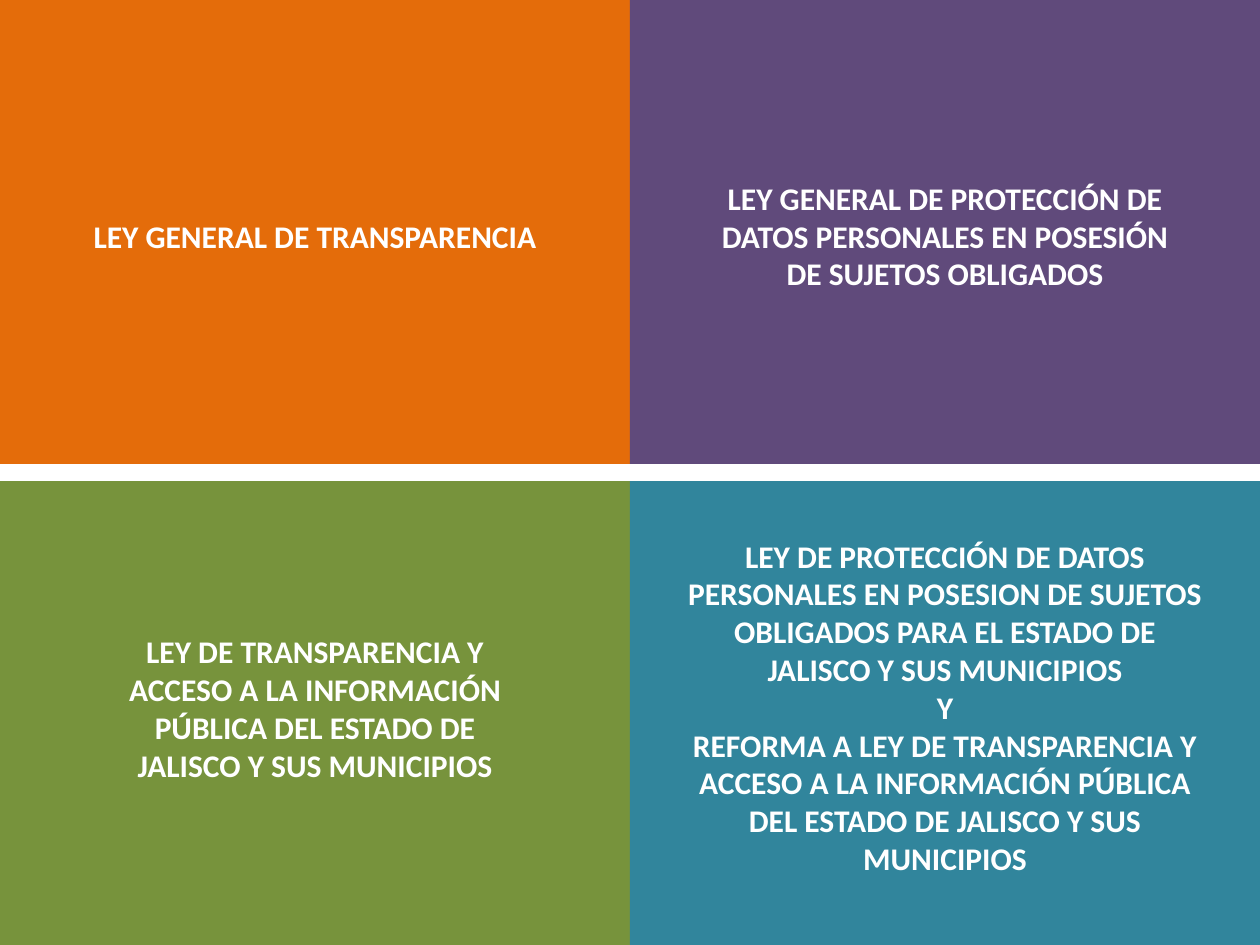
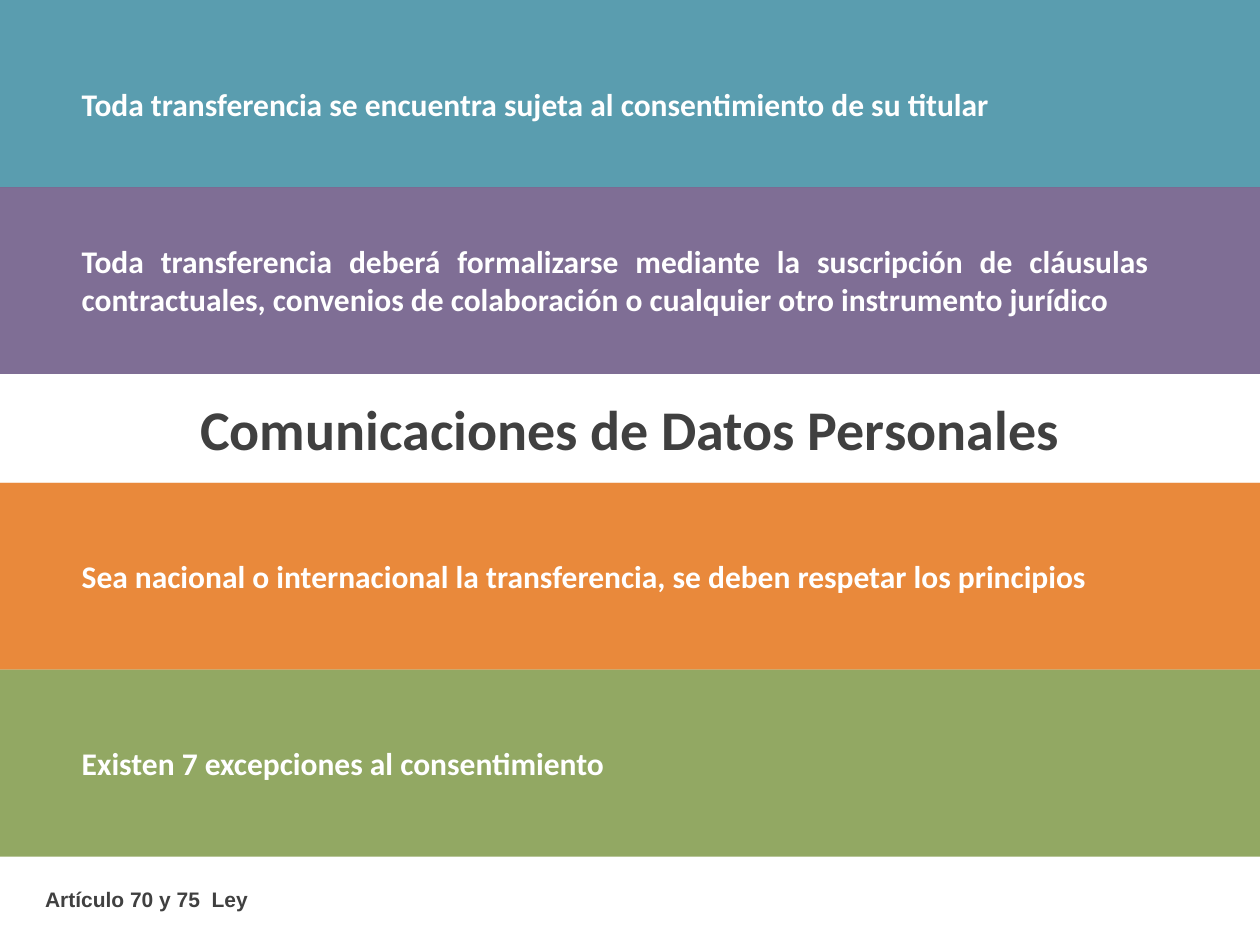
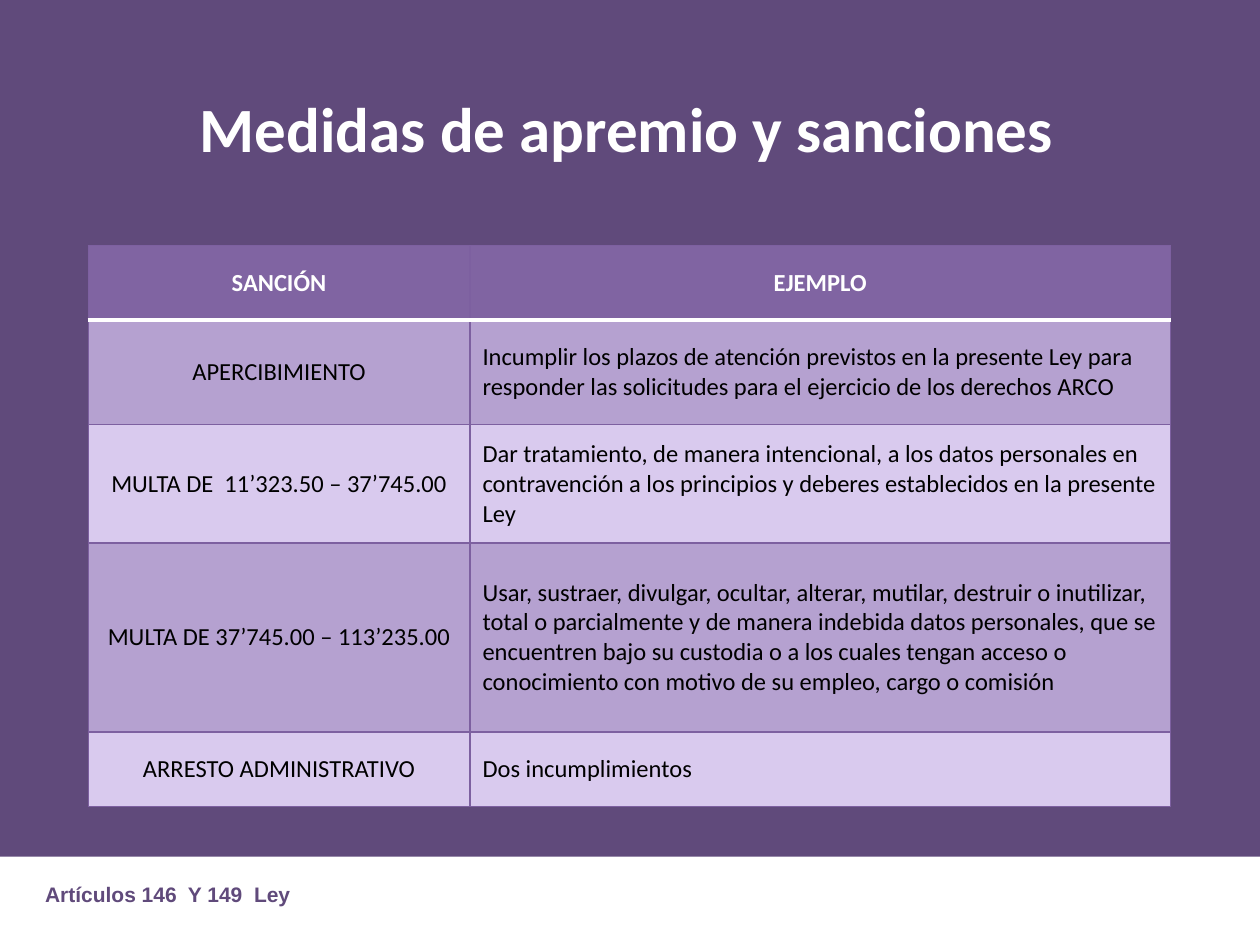
from collections import namedtuple

from lxml import etree
from pptx import Presentation, util as u
from pptx.dml.color import RGBColor
from pptx.enum import shapes, text
from pptx.oxml.ns import qn

COLS, ROWS = 10, 7.5  # the grid that all lengths are counted in
CELL = u.Inches(1)
FOOTER_TOP = 6.8
COLORS = {
    "white": "FFFFFF", "black": "000000", "gray": "404040",
    "purple": "604A7B", "teal": "31859C", "green": "77933C", "orange": "E46C0A",
    "header": "8064A2", "odd_row": "B5A1D0", "even_row": "D9CAEE", "grid": "7D60A0",
}
ALIGN = {"left": text.PP_ALIGN.LEFT, "center": text.PP_ALIGN.CENTER,
         "justify": text.PP_ALIGN.JUSTIFY}


class Box(namedtuple("Box", "left top width height")):
    def inner(self, left, top, width, height):
        """Box whose left and top are counted from this one."""
        return Box(self.left + left, self.top + top, width, height)

    def centered(self, width, height):
        return self.inner((self.width - width) / 2, (self.height - height) / 2, width, height)

    def emu(self):
        return [round(length * CELL) for length in self]


SLIDE = Box(0, 0, COLS, ROWS)
FOOTER = SLIDE.inner(0, FOOTER_TOP, COLS, ROWS - FOOTER_TOP)


def rgb(color):
    return RGBColor.from_string(COLORS[color])


def write(frame, content, size=18, color="white", bold=True, font="Calibri", align="center"):
    """Fill a text frame, one paragraph per line of content."""
    for number, line in enumerate(content.split("\n")):
        paragraph = frame.add_paragraph() if number else frame.paragraphs[0]
        paragraph.alignment = ALIGN[align]
        run = paragraph.add_run()
        run.text = line
        run.font.size, run.font.bold, run.font.name = u.Pt(size), bold, font
        run.font.color.rgb = rgb(color)


def add_label(slide, box, content, wrap=True, grow=True, **style):
    frame = slide.shapes.add_textbox(*box.emu()).text_frame
    frame.word_wrap = wrap
    frame.vertical_anchor = text.MSO_ANCHOR.TOP if grow else text.MSO_ANCHOR.MIDDLE
    if grow:
        frame.auto_size = text.MSO_AUTO_SIZE.SHAPE_TO_FIT_TEXT
    write(frame, content, **style)


def add_panel(slide, box, color, opacity=100):
    panel = slide.shapes.add_shape(shapes.MSO_SHAPE.RECTANGLE, *box.emu())
    panel.shadow.inherit = False
    panel.line.fill.background()
    panel.fill.solid()
    panel.fill.fore_color.rgb = rgb(color)
    if opacity < 100:
        tint = panel.fill._xPr.find(".//" + qn("a:srgbClr"))
        etree.SubElement(tint, qn("a:alpha"), val=str(opacity * 1000))
    return panel


def add_footer(slide, article, drop, width, color):
    add_label(slide, FOOTER.inner(0.26, drop, width, 0.3), article, wrap=False,
              size=12, font="Arial", color=color, align="left")


def add_divider(slide, box, color, weight):
    middle = box.top + box.height / 2
    ends = Box(box.left, middle, box.left + box.width, middle).emu()
    divider = slide.shapes.add_connector(shapes.MSO_CONNECTOR.STRAIGHT, *ends)
    divider.line.color.rgb = rgb(color)
    divider.line.width = u.Pt(weight)
    etree.SubElement(divider._element.spPr, qn("a:effectLst"))


def add_border(cell, side, color, weight):
    line = etree.SubElement(cell._tc.get_or_add_tcPr(), qn("a:ln" + side),
                            w=str(u.Pt(weight)))
    fill = etree.SubElement(line, qn("a:solidFill"))
    etree.SubElement(fill, qn("a:srgbClr"), val=COLORS[color])


def add_sanctions(slide, box, rows, widths, heights):
    table = slide.shapes.add_table(len(rows), len(widths), *box.emu()).table
    for column, width in zip(table.columns, widths):
        column.width = round(width * CELL)
    for r, (entries, height) in enumerate(zip(rows, heights)):
        table.rows[r].height = round(height * CELL)
        header = r == 0
        fill = "header" if header else "odd_row" if r % 2 else "even_row"
        under_header = {"T": r == 1, "B": header}
        for c, entry in enumerate(entries):
            cell = table.cell(r, c)
            cell.vertical_anchor = text.MSO_ANCHOR.MIDDLE
            for side in "LRTB":
                border = ("white", 2) if under_header.get(side) else ("grid", 0.75)
                add_border(cell, side, *border)
            cell.fill.solid()
            cell.fill.fore_color.rgb = rgb(fill)
            write(cell.text_frame, entry, size=14, bold=header,
                  color="white" if header else "black",
                  align="center" if header or c == 0 else "left")


def laws_slide(slide, box):
    laws = [  # color, text width, text height, law
        ("orange", 3.75, 0.4, "LEY GENERAL DE TRANSPARENCIA"),
        ("purple", 3.85, 1.01,
         "LEY GENERAL DE PROTECCIÓN DE DATOS PERSONALES EN POSESIÓN DE SUJETOS OBLIGADOS"),
        ("green", 3.59, 1.31,
         "LEY DE TRANSPARENCIA Y ACCESO A LA INFORMACIÓN PÚBLICA DEL ESTADO DE JALISCO "
         "Y SUS MUNICIPIOS"),
        ("teal", 4.3, 2.83,
         "LEY DE PROTECCIÓN DE DATOS PERSONALES EN POSESION DE SUJETOS OBLIGADOS PARA EL "
         "ESTADO DE JALISCO Y SUS MUNICIPIOS\nY\nREFORMA A LEY DE TRANSPARENCIA Y ACCESO A LA "
         "INFORMACIÓN PÚBLICA DEL ESTADO DE JALISCO Y SUS MUNICIPIOS"),
    ]
    width, height = box.width / 2, box.height / 2
    for number, (color, label_width, label_height, law) in enumerate(laws):
        row, column = divmod(number, 2)
        quadrant = box.inner(column * width, row * height, width, height)
        add_panel(slide, quadrant, color)
        add_label(slide, quadrant.centered(label_width, label_height), law)
    add_divider(slide, box, "white", 10)


def transfers_slide(slide, box):
    rules = [  # color, text width, text height, drop from the band's middle, rule
        ("teal", 8.08, 0.4, 0.08,
         "Toda transferencia se encuentra sujeta al consentimiento de su titular"),
        ("purple", 8.67, 0.71, 0,
         "Toda transferencia deberá formalizarse mediante la suscripción de cláusulas "
         "contractuales, convenios de colaboración o cualquier otro instrumento jurídico"),
        ("orange", 9.06, 0.4, 0,
         "Sea nacional o internacional la transferencia, se deben respetar los principios"),
        ("green", 7.42, 0.4, 0, "Existen 7 excepciones al consentimiento"),
    ]
    title_height = 0.86
    band_height = (FOOTER_TOP - title_height) / len(rules)
    for number, (color, width, height, drop, rule) in enumerate(rules):
        top = number * band_height + (title_height if number >= 2 else 0)
        band = box.inner(0, top, box.width, band_height)
        add_panel(slide, band, color, opacity=80)
        add_label(slide, band.inner(0.55, (band_height - height) / 2 + drop, width, height),
                  rule, align="justify")
    add_footer(slide, "Artículo 70 y 75  Ley", 0.19, 1.83, "gray")
    title = add_panel(slide, box.inner(0, 2 * band_height, box.width, title_height), "white")
    title.text_frame.vertical_anchor = text.MSO_ANCHOR.MIDDLE
    write(title.text_frame, "Comunicaciones de Datos Personales", size=32, color="gray")


def sanctions_slide(slide, box):
    rows = [
        ("SANCIÓN", "EJEMPLO"),
        ("APERCIBIMIENTO",
         "Incumplir los plazos de atención previstos en la presente Ley para responder las "
         "solicitudes para el ejercicio de los derechos ARCO"),
        ("MULTA DE  11’323.50 – 37’745.00",
         "Dar tratamiento, de manera intencional, a los datos personales en contravención a "
         "los principios y deberes establecidos en la presente Ley"),
        ("MULTA DE 37’745.00 – 113’235.00",
         "Usar, sustraer, divulgar, ocultar, alterar, mutilar, destruir o inutilizar, total o "
         "parcialmente y de manera indebida datos personales, que se encuentren bajo su "
         "custodia o a los cuales tengan acceso o conocimiento con motivo de su empleo, cargo "
         "o comisión"),
        ("ARRESTO ADMINISTRATIVO", "Dos incumplimientos"),
    ]
    add_panel(slide, box.inner(0, 0, box.width, FOOTER_TOP), "purple")
    add_sanctions(slide, box.inner(0.7, 1.95, 8.59, 4.45), rows,
                  widths=(3.03, 5.56), heights=(0.59, 0.83, 0.94, 1.5, 0.59))
    add_footer(slide, "Artículos 146  Y 149  Ley", 0.15, 2.17, "purple")
    add_label(slide, box.inner(1.46, 0.23, 7.03, 1.56), "Medidas de apremio y sanciones",
              grow=False, size=36)


def main():
    deck = Presentation()
    deck.slide_width, deck.slide_height = SLIDE.emu()[2:]
    blank = deck.slide_layouts[6]
    for build in (laws_slide, transfers_slide, sanctions_slide):
        build(deck.slides.add_slide(blank), SLIDE)
    deck.save("out.pptx")


if __name__ == "__main__":
    main()
